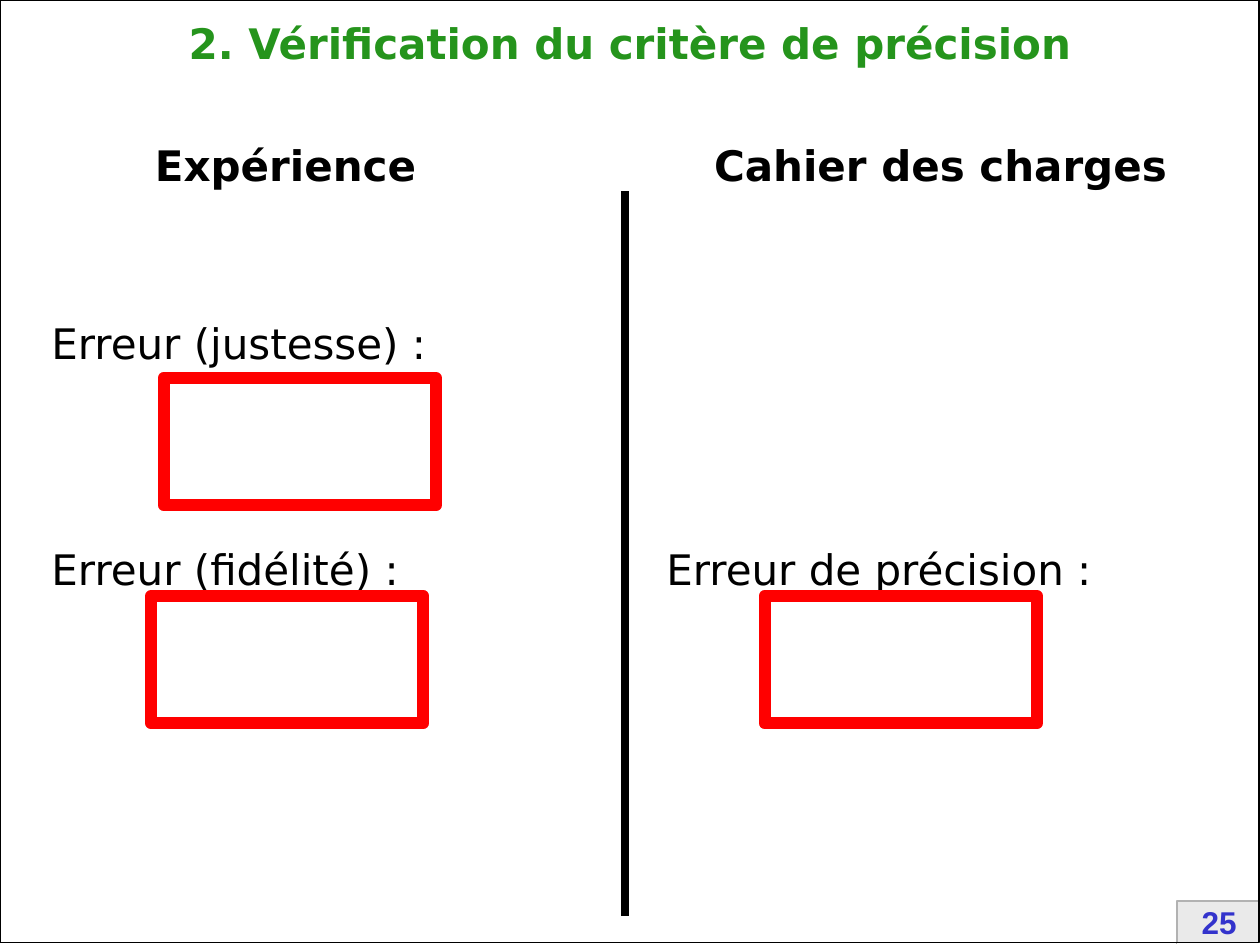
from dataclasses import dataclass

from lxml.etree import SubElement
from pptx import Presentation
from pptx.dml.color import RGBColor
from pptx.enum.shapes import MSO_CONNECTOR, MSO_SHAPE
from pptx.enum.text import MSO_ANCHOR as Anchor, PP_ALIGN as Align
from pptx.oxml.ns import qn
from pptx.util import Pt

BLACK = RGBColor(0x00, 0x00, 0x00)
WHITE = RGBColor(0xFF, 0xFF, 0xFF)
RED = RGBColor(0xFF, 0x00, 0x00)
GREEN = RGBColor(0x25, 0x94, 0x1C)
BLUE = RGBColor(0x33, 0x33, 0xCC)
LIGHT_GREY = RGBColor(0xEA, 0xEA, 0xEA)
EDGE_GREY = RGBColor(0xB2, 0xB2, 0xB2)

FONT = "DejaVu Sans"
LABEL_HEIGHT = 36
HEADING_TOP, ACCURACY_TOP, PRECISION_TOP = 76.3, 177.8, 306.7
LEFT_COLUMN, RIGHT_COLUMN = 22.3, 373.7
BOX_WIDTH, BOX_HEIGHT = 155.5, 72.7


@dataclass(frozen=True)
class Label:
    text: str
    left: float
    top: float
    width: float
    bold: bool = False


@dataclass(frozen=True)
class AnswerBox:
    left: float
    top: float


LABELS = [
    Label("Expérience", 81.4, HEADING_TOP, 212.4, bold=True),
    Label("Cahier des charges", 401, HEADING_TOP, 293, bold=True),
    Label("Erreur (justesse) :", LEFT_COLUMN, ACCURACY_TOP, 342.7),
    Label("Erreur (fidélité) :", LEFT_COLUMN, PRECISION_TOP, 322.6),
    Label("Erreur de précision :", RIGHT_COLUMN, PRECISION_TOP, 322.6),
]
ANSWER_BOXES = [AnswerBox(93.6, 216), AnswerBox(86.4, 340.6), AnswerBox(437, 340.6)]


def write(shape, text: str, size: float = 24, font: str = FONT,
          color: RGBColor = BLACK, bold: bool = False,
          align: Align = Align.LEFT, anchor: Anchor = Anchor.MIDDLE) -> None:
    frame = shape.text_frame
    frame.word_wrap = True
    frame.vertical_anchor = anchor
    paragraph = frame.paragraphs[0]
    paragraph.alignment = align
    paragraph.space_before = Pt(0)
    run = paragraph.add_run()
    run.text = text
    run.font.name, run.font.size, run.font.bold = font, Pt(size), bold
    run.font.color.rgb = color


def add_rectangle(slide, left: float, top: float, width: float, height: float,
                  line: RGBColor | None = None, line_width: float = 1,
                  fill: RGBColor | None = None) -> None:
    shape = slide.shapes.add_shape(MSO_SHAPE.RECTANGLE, Pt(left), Pt(top), Pt(width), Pt(height))
    shape.shadow.inherit = False
    if fill is None:
        shape.fill.background()
    else:
        shape.fill.solid()
        shape.fill.fore_color.rgb = fill
    if line is None:
        shape.line.fill.background()
    else:
        shape.line.color.rgb = line
        shape.line.width = Pt(line_width)


def add_edge(slide, points: list[tuple[float, float]], color: RGBColor) -> None:
    """Draw an open, unfilled outline through the points."""
    start, *others = [(Pt(x), Pt(y)) for x, y in points]
    builder = slide.shapes.build_freeform(*start)
    builder.add_line_segments(others, close=False)
    shape = builder.convert_to_shape()
    shape.shadow.inherit = False
    shape.fill.background()
    shape.line.color.rgb = color
    shape.line.width = Pt(1)


def add_text_box(slide, left: float, top: float, width: float, height: float):
    return slide.shapes.add_textbox(Pt(left), Pt(top), Pt(width), Pt(height))


def add_page_number(slide, number: str) -> None:
    left, top, right, bottom = 672.5, 514.8, 719.5, 539.3
    add_rectangle(slide, left, top, right - left, bottom - top, fill=LIGHT_GREY)
    add_edge(slide, [(right, top), (left, top), (left, bottom)], EDGE_GREY)
    add_edge(slide, [(right, top), (right, bottom), (left, bottom)], WHITE)
    write(add_text_box(slide, 675.4, 512.6, 42.5, 28.8), number, size=18,
          font="Arial", color=BLUE, bold=True, align=Align.CENTER, anchor=Anchor.TOP)


def add_divider(slide) -> None:
    divider = slide.shapes.add_connector(
        MSO_CONNECTOR.STRAIGHT, Pt(357.1), Pt(109.4), Pt(357.1), Pt(523.4))
    divider.line.color.rgb = BLACK
    divider.line.width = Pt(5)
    SubElement(divider._element.spPr, qn("a:effectLst"))


def main() -> None:
    presentation = Presentation()
    presentation.slide_width, presentation.slide_height = Pt(720), Pt(540)
    slide = presentation.slides.add_slide(presentation.slide_layouts[5])

    add_page_number(slide, "25")
    add_rectangle(slide, 0, 0, 719.3, 538.6, line=BLACK)

    title = slide.shapes.title
    title.left, title.top, title.width, title.height = Pt(0), Pt(6.5), Pt(720), Pt(LABEL_HEIGHT)
    write(title, "2. Vérification du critère de précision", color=GREEN,
          bold=True, align=Align.CENTER, anchor=Anchor.TOP)

    add_divider(slide)
    for label in LABELS:
        box = add_text_box(slide, label.left, label.top, label.width, LABEL_HEIGHT)
        write(box, label.text, bold=label.bold)
    for answer in ANSWER_BOXES:
        add_rectangle(slide, answer.left, answer.top, BOX_WIDTH, BOX_HEIGHT,
                      line=RED, line_width=7)

    presentation.save("out.pptx")


if __name__ == "__main__":
    main()
